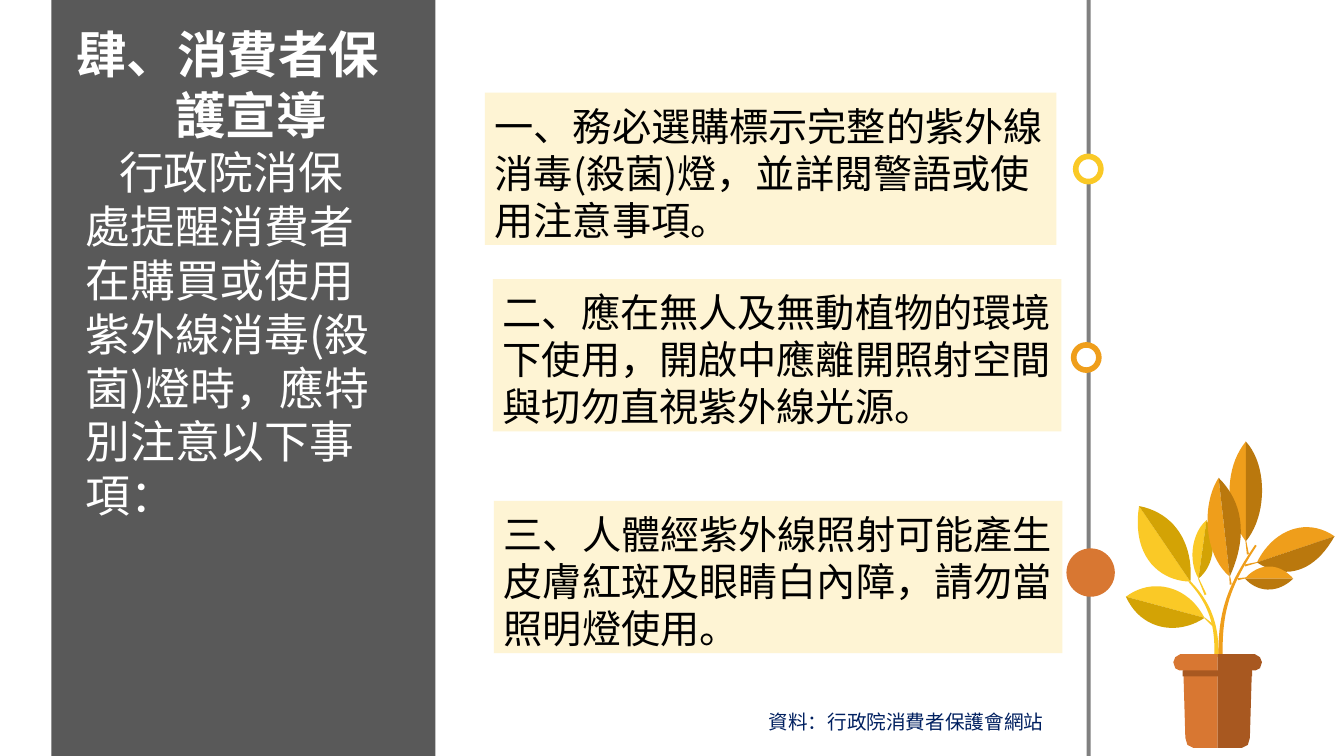
from dataclasses import dataclass
from math import comb, hypot
from typing import NamedTuple

from lxml.etree import SubElement
from pptx import Presentation
from pptx.dml.color import RGBColor
from pptx.enum.shapes import MSO_SHAPE
from pptx.enum.text import MSO_ANCHOR, MSO_AUTO_SIZE, PP_ALIGN
from pptx.oxml.ns import qn
from pptx.util import Emu, Inches, Pt

SLIDE_WIDTH, SLIDE_HEIGHT = Emu(12192000), Emu(6858000)
COLUMNS, ROWS = 40, 22.5


class Point(NamedTuple):
    col: float
    row: float


class Area(NamedTuple):
    col: float
    row: float
    cols: float
    rows: float


@dataclass(frozen=True)
class Theme:
    font: str = "Noto Sans CJK SC"
    white: str = "FFFFFF"
    black: str = "000000"
    navy: str = "002060"
    panel: str = "595959"
    axis: str = "808080"
    card: str = "FEF4D4"
    yellow: str = "FAC926"
    ochre: str = "D3A305"
    orange: str = "EF9E1B"
    amber: str = "BA780D"
    clay: str = "D87732"
    dark_clay: str = "A85820"
    title_size: int = 36
    intro_size: int = 32
    card_size: int = 28
    source_size: int = 14
    leading: float = 1.2
    ring_width: int = 4


THEME = Theme()


@dataclass(frozen=True)
class Advice:
    area: Area
    wording: str


@dataclass(frozen=True)
class Marker:
    center: Point
    diameter: float
    fill: str
    ring: str | None = None


@dataclass(frozen=True)
class Leaf:
    base: tuple
    tip: tuple
    light_bend: tuple
    dark_bend: tuple
    light: str
    dark: str


@dataclass(frozen=True)
class Stem:
    curve: tuple
    thickness: float
    color: str


ADVICE = (
    Advice(Area(14.43, 2.76, 17.01, 4.53), "一、務必選購標示完整的紫外線消毒(殺菌)燈，並詳閱警語或使用注意事項。"),
    Advice(Area(14.67, 8.31, 16.92, 4.53), "二、應在無人及無動植物的環境下使用，開啟中應離開照射空間與切勿直視紫外線光源。"),
    Advice(Area(14.7, 14.91, 16.92, 4.53), "三、人體經紫外線照射可能產生皮膚紅斑及眼睛白內障，請勿當照明燈使用。"),
)
MARKERS = (
    Marker(Point(32.39, 5.03), 0.75, THEME.white, THEME.yellow),
    Marker(Point(32.33, 10.64), 0.75, THEME.white, THEME.orange),
    Marker(Point(32.46, 17.04), 1.44, THEME.clay),
)
YELLOW, ORANGE = (THEME.yellow, THEME.ochre), (THEME.orange, THEME.amber)
LEAVES = (
    Leaf((35.43, 17.31), (33.9, 15.06), ((34.6, 17.3), (33.66, 16.65)), ((35.52, 16.2), (34.98, 15.27)), *YELLOW),
    Leaf((35.85, 18.39), (33.51, 17.76), ((35.34, 17.4), (34.26, 17.19)), ((35.04, 18.93), (33.96, 18.75)), *YELLOW),
    Leaf((35.67, 17.22), (35.91, 15.48), ((35.34, 16.65), (35.49, 15.84)), ((36.12, 16.86), (36.24, 16.14)), *YELLOW),
    Leaf((37.08, 16.11), (37.08, 13.14), ((36.45, 15.3), (36.42, 13.95)), ((37.71, 15.36), (37.74, 13.86)), *ORANGE),
    Leaf((36.6, 17.16), (36.27, 14.22), ((35.82, 16.5), (35.76, 15)), ((37.11, 16.05), (37.05, 15)), *ORANGE),
    Leaf((37.41, 16.74), (39.72, 15.96), ((37.86, 15.81), (38.85, 15.36)), ((38.25, 17.28), (39.12, 17.04)), *ORANGE),
    Leaf((37.05, 17.22), (38.49, 17.22), ((37.5, 16.71), (38.1, 16.77)), ((37.5, 17.7), (38.1, 17.61)), *ORANGE),
)
STEMS = (
    Stem(((36.2, 19.56), (36.24, 18.6), (36, 17.94), (35.4, 17.31)), 0.13, THEME.yellow),
    Stem(((36.09, 18.6), (35.85, 18.39)), 0.06, THEME.yellow),
    Stem(((35.88, 17.7), (35.67, 17.22)), 0.06, THEME.yellow),
    Stem(((36.33, 19.56), (36.3, 18.15), (36.6, 17.4), (37.38, 16.23)), 0.13, THEME.orange),
    Stem(((36.63, 17.4), (36.6, 17.16)), 0.06, THEME.orange),
    Stem(((37.14, 16.5), (37.08, 16.11)), 0.06, THEME.orange),
    Stem(((37.05, 16.83), (37.41, 16.74)), 0.06, THEME.orange),
    Stem(((36.84, 17.24), (37.08, 17.2)), 0.06, THEME.orange),
)
POT_AXIS = 36.24
POT_PROFILE = (
    (0, 19.47), (1.11, 19.47), (1.26, 19.56), (1.32, 19.71), (1.26, 19.89), (1.14, 19.95),
    (1.02, 19.95), (0.96, 21.96), (0.9, 22.17), (0.72, 22.26), (0, 22.26),
)


def x(cols: float) -> Emu:
    return Emu(round(SLIDE_WIDTH * cols / COLUMNS))


def y(rows: float) -> Emu:
    return Emu(round(SLIDE_HEIGHT * rows / ROWS))


def box(area: Area) -> tuple:
    return x(area.col), y(area.row), x(area.cols), y(area.rows)


def paint(shape, fill: str, ring: str | None = None) -> None:
    shape.shadow.inherit = False
    shape.fill.solid()
    shape.fill.fore_color.rgb = RGBColor.from_string(fill)
    if ring:
        shape.line.color.rgb = RGBColor.from_string(ring)
        shape.line.width = Pt(THEME.ring_width)
    else:
        shape.line.fill.background()


def add_preset(slide, kind, area: Area, fill: str, ring: str | None = None):
    shape = slide.shapes.add_shape(kind, *box(area))
    paint(shape, fill, ring)
    return shape


def add_outline(slide, points: list, fill: str) -> None:
    start, *rest = [(x(col), y(row)) for col, row in points]
    builder = slide.shapes.build_freeform(*start)
    builder.add_line_segments(rest, close=True)
    paint(builder.convert_to_shape(), fill)


def write(shape, wording: str, size: int, color: str, bold: bool = False,
          align=PP_ALIGN.LEFT, margin: float = 0, indent: float = 0, centered: bool = False) -> None:
    frame = shape.text_frame
    frame.text = wording
    frame.word_wrap = True
    frame.auto_size = MSO_AUTO_SIZE.NONE
    frame.vertical_anchor = MSO_ANCHOR.MIDDLE if centered else MSO_ANCHOR.TOP
    paragraph = frame.paragraphs[0]
    paragraph.alignment = align
    if not centered:
        frame.margin_top, frame.margin_bottom = Inches(0.09), 0
        paragraph.line_spacing = Pt(size * THEME.leading)
    properties = paragraph._p.get_or_add_pPr()
    properties.set("marL", str(x(margin)))
    properties.set("indent", str(x(indent)))
    for run in paragraph.runs:
        run.font.size, run.font.bold, run.font.name = Pt(size), bold, THEME.font
        run.font.color.rgb = RGBColor.from_string(color)
        SubElement(run._r.get_or_add_rPr(), qn("a:ea")).set("typeface", THEME.font)


def bezier(points: tuple, steps: int = 20) -> list:
    degree = len(points) - 1
    weights = [[comb(degree, i) * (1 - s / steps) ** (degree - i) * (s / steps) ** i
                for i in range(degree + 1)] for s in range(steps + 1)]
    return [tuple(sum(w * p[axis] for w, p in zip(row, points)) for axis in (0, 1)) for row in weights]


def add_leaf(slide, leaf: Leaf) -> None:
    for bend, color in ((leaf.light_bend, leaf.light), (leaf.dark_bend, leaf.dark)):
        add_outline(slide, bezier((leaf.base, *bend, leaf.tip)), color)


def add_stem(slide, stem: Stem) -> None:
    spine = bezier(stem.curve)
    left, right = [], []
    for i, (col, row) in enumerate(spine):
        before, after = spine[max(i - 1, 0)], spine[min(i + 1, len(spine) - 1)]
        run, rise = after[0] - before[0], after[1] - before[1]
        reach = stem.thickness * (1 - 0.6 * i / len(spine)) / 2 / hypot(run, rise)
        left.append((col - rise * reach, row + run * reach))
        right.append((col + rise * reach, row - run * reach))
    add_outline(slide, left + right[::-1], stem.color)


def add_plant(slide) -> None:
    for stem in STEMS:
        add_stem(slide, stem)
    for leaf in LEAVES:
        add_leaf(slide, leaf)
    for side, color in ((-1, THEME.clay), (1, THEME.dark_clay)):
        add_outline(slide, [(POT_AXIS + side * reach, row) for reach, row in POT_PROFILE], color)
    add_preset(slide, MSO_SHAPE.RECTANGLE, Area(35.2, 19.95, 2.07, 0.18), THEME.dark_clay)


def main() -> None:
    deck = Presentation()
    deck.slide_width, deck.slide_height = SLIDE_WIDTH, SLIDE_HEIGHT
    slide = deck.slides.add_slide(deck.slide_layouts[5])
    add_preset(slide, MSO_SHAPE.RECTANGLE, Area(1.53, 0, 11.43, ROWS), THEME.panel)
    title = slide.shapes.title
    title.element.getparent().append(title.element)
    title.left, title.top, title.width, title.height = box(Area(1.98, 0.42, 10.5, 3.93))
    write(title, "肆、消費者保護宣導", THEME.title_size, THEME.white, bold=True, margin=2.94, indent=-2.94)
    intro = slide.shapes.add_textbox(*box(Area(2.25, 4.05, 9.45, 13.23)))
    write(intro, "行政院消保處提醒消費者在購買或使用紫外線消毒(殺菌)燈時，應特別注意以下事項：",
          THEME.intro_size, THEME.white, indent=1)
    add_preset(slide, MSO_SHAPE.RECTANGLE, Area(32.34, 0, 0.12, ROWS), THEME.axis)
    for marker in MARKERS:
        corner = [center - marker.diameter / 2 for center in marker.center]
        add_preset(slide, MSO_SHAPE.OVAL, Area(*corner, marker.diameter, marker.diameter), marker.fill, marker.ring)
    for advice in ADVICE:
        card = add_preset(slide, MSO_SHAPE.RECTANGLE, advice.area, THEME.card)
        write(card, advice.wording, THEME.card_size, THEME.black)
    add_plant(slide)
    source = slide.shapes.add_textbox(*box(Area(20.13, 20.67, 13.68, 1.59)))
    write(source, "資料：行政院消費者保護會網站", THEME.source_size, THEME.navy, align=PP_ALIGN.CENTER, centered=True)
    deck.save("out.pptx")


if __name__ == "__main__":
    main()
